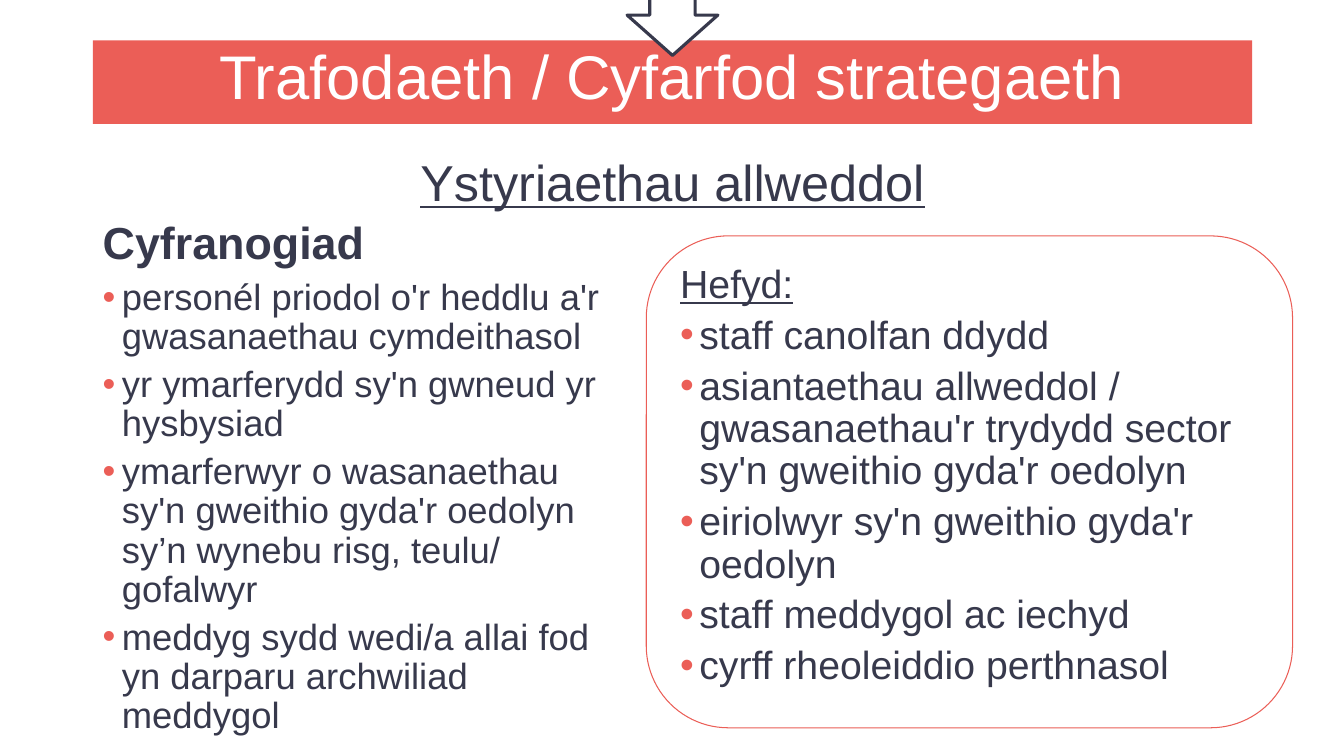
from dataclasses import dataclass

from lxml import etree
from pptx import Presentation
from pptx.dml.color import RGBColor
from pptx.enum.shapes import MSO_SHAPE
from pptx.enum.text import MSO_ANCHOR, PP_ALIGN
from pptx.oxml.ns import qn
from pptx.util import Pt

PX = 9144
TITLE_ONLY = 5
ROUNDED, DOWN_ARROW = MSO_SHAPE.ROUNDED_RECTANGLE, MSO_SHAPE.DOWN_ARROW
TOP, MIDDLE = MSO_ANCHOR.TOP, MSO_ANCHOR.MIDDLE
LEFT, CENTER = PP_ALIGN.LEFT, PP_ALIGN.CENTER


@dataclass(frozen=True)
class Theme:
    font: str = "Arial"
    coral: RGBColor = RGBColor(0xEB, 0x5E, 0x57)
    ink: RGBColor = RGBColor(0x37, 0x39, 0x4C)
    white: RGBColor = RGBColor(0xFF, 0xFF, 0xFF)
    title: int = 44
    subtitle: int = 36
    heading: int = 32
    also: int = 28
    people: int = 26
    leading: float = 0.9
    title_leading: float = 0.8
    gap: int = 6
    indent: int = 19


THEME = Theme()

PARTICIPANTS = [
    "personél priodol o'r heddlu a'r gwasanaethau cymdeithasol",
    "yr ymarferydd sy'n gwneud yr hysbysiad",
    "ymarferwyr o wasanaethau sy'n gweithio gyda'r oedolyn sy’n wynebu risg, teulu/ gofalwyr",
    "meddyg sydd wedi/a allai fod yn darparu archwiliad meddygol",
]
ALSO_INVITED = [
    "staff canolfan ddydd",
    "asiantaethau allweddol / gwasanaethau'r trydydd sector sy'n gweithio gyda'r oedolyn",
    "eiriolwyr sy'n gweithio gyda'r oedolyn",
    "staff meddygol ac iechyd",
    "cyrff rheoleiddio perthnasol",
]


def emu(box):
    return [length * PX for length in box]


def add_bullet(paragraph):
    properties = paragraph._p.get_or_add_pPr()
    properties.set("marL", str(THEME.indent * PX))
    properties.set("indent", str(-THEME.indent * PX))
    colour = etree.SubElement(properties, qn("a:buClr"))
    etree.SubElement(colour, qn("a:srgbClr"), val=str(THEME.coral))
    etree.SubElement(properties, qn("a:buFont"), typeface=THEME.font)
    etree.SubElement(properties, qn("a:buChar"), char="•")


def write(frame, text, size, colour=THEME.ink, align=LEFT, leading=THEME.leading,
          gap=THEME.gap, bullet=False, underline=False, bold=False):
    first = frame.paragraphs[0]
    paragraph = frame.add_paragraph() if first.runs else first
    if bullet:
        add_bullet(paragraph)
    paragraph.alignment = align
    paragraph.line_spacing = leading
    paragraph.space_before = Pt(0)
    paragraph.space_after = Pt(gap)
    run = paragraph.add_run()
    run.text = text
    font = run.font
    font.name, font.size, font.color.rgb = THEME.font, Pt(size), colour
    font.underline, font.bold = underline, bold


def add_text_area(slide, box):
    frame = slide.shapes.add_textbox(*emu(box)).text_frame
    frame.word_wrap = True
    return frame


def title_banner(slide, box):
    banner = slide.shapes.title
    banner.left, banner.top, banner.width, banner.height = emu(box)
    outline = etree.SubElement(banner._element.spPr, qn("a:prstGeom"), prst="roundRect")
    etree.SubElement(outline, qn("a:avLst"))
    banner.fill.solid()
    banner.fill.fore_color.rgb = THEME.coral
    frame = banner.text_frame
    frame.word_wrap = True
    frame.vertical_anchor = MIDDLE
    write(frame, "Trafodaeth / Cyfarfod strategaeth", THEME.title, THEME.white,
          CENTER, THEME.title_leading, gap=0)


def key_considerations(slide, box):
    left, top, width, height = box
    heading_height = 120
    headings = add_text_area(slide, (left, top, width, heading_height))
    write(headings, "Ystyriaethau allweddol", THEME.subtitle, align=CENTER, underline=True)
    write(headings, "Cyfranogiad", THEME.heading, bold=True)
    people = add_text_area(
        slide, (left, top + heading_height, 518, height - heading_height))
    for participant in PARTICIPANTS:
        write(people, participant, THEME.people, bullet=True)


def also_panel(slide, box):
    panel = slide.shapes.add_shape(ROUNDED, *emu(box))
    panel.shadow.inherit = False
    panel.fill.background()
    panel.line.color.rgb = THEME.coral
    panel.line.width = Pt(0.75)
    frame = panel.text_frame
    frame.word_wrap = True
    frame.vertical_anchor = TOP
    write(frame, "Hefyd:", THEME.also, underline=True)
    for invitee in ALSO_INVITED:
        write(frame, invitee, THEME.also, bullet=True)


def flow_arrow(slide, box):
    arrow = slide.shapes.add_shape(DOWN_ARROW, *emu(box))
    arrow.shadow.inherit = False
    arrow.fill.solid()
    arrow.fill.fore_color.rgb = THEME.white
    arrow.line.color.rgb = THEME.ink
    arrow.line.width = Pt(2.25)


def main():
    deck = Presentation()
    deck.slide_width, deck.slide_height = emu((1333, 750))
    slide = deck.slides.add_slide(deck.slide_layouts[TITLE_ONLY])
    title_banner(slide, (92, 40, 1150, 83))
    key_considerations(slide, (92, 152, 1150, 608))
    also_panel(slide, (641, 234, 641, 488))
    flow_arrow(slide, (622, -25, 90, 80))
    deck.save("out.pptx")


if __name__ == "__main__":
    main()
